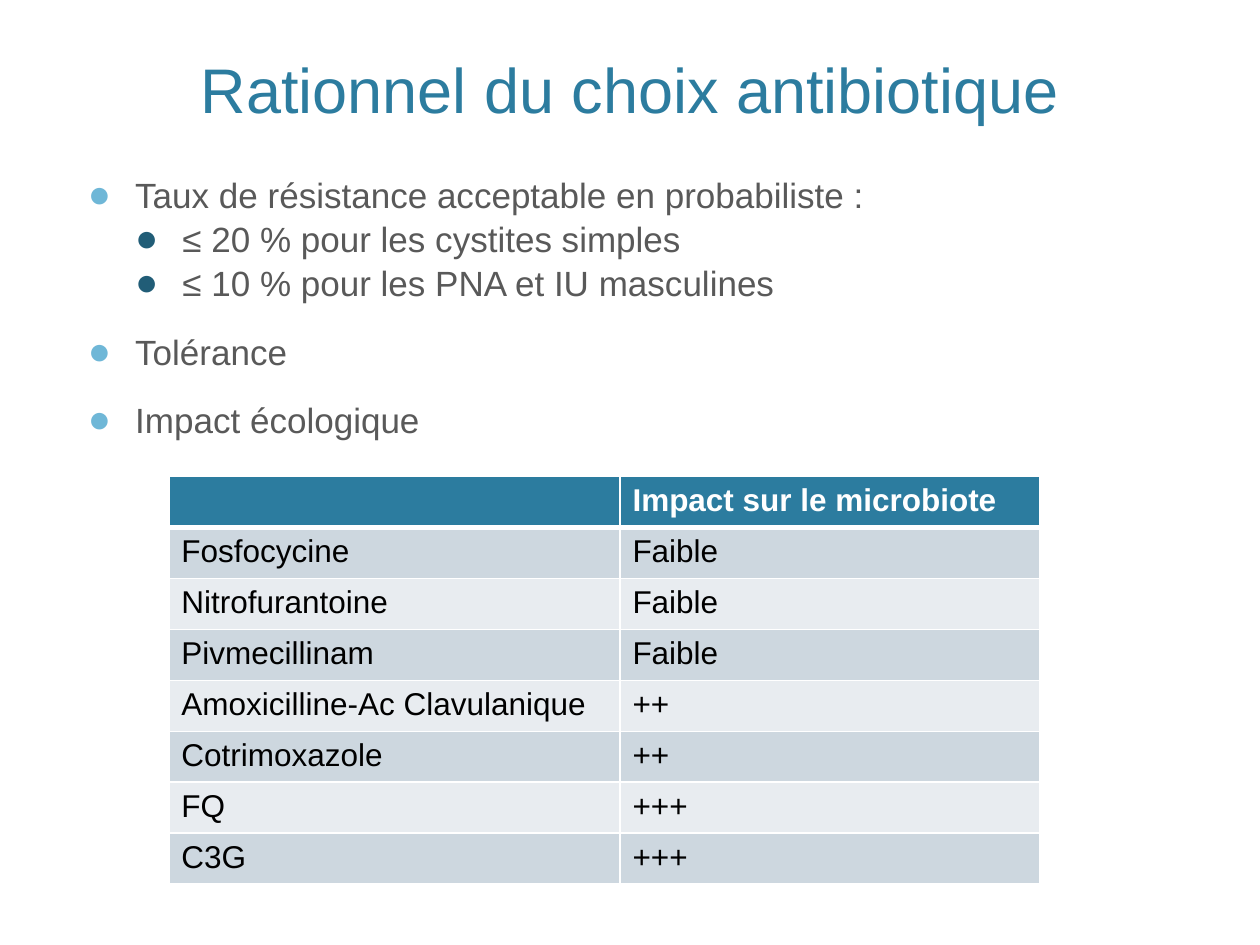
import pptx
import pptx.dml.color
import pptx.enum.text
import pptx.oxml
import pptx.oxml.ns
import pptx.util

Inches = pptx.util.Inches
Pt = pptx.util.Pt
RGBColor = pptx.dml.color.RGBColor
PP_ALIGN = pptx.enum.text.PP_ALIGN
MSO_ANCHOR = pptx.enum.text.MSO_ANCHOR

TEAL = RGBColor(0x2C, 0x7C, 0x9F)
LIGHT_BLUE = RGBColor(0x6F, 0xB7, 0xD7)
DARK_BLUE = RGBColor(0x21, 0x5D, 0x77)
GREY = RGBColor(0x59, 0x59, 0x59)
WHITE = RGBColor(0xFF, 0xFF, 0xFF)
BLACK = RGBColor(0x00, 0x00, 0x00)
BAND_DARK = RGBColor(0xCD, 0xD7, 0xDF)
BAND_LIGHT = RGBColor(0xE8, 0xEC, 0xF0)

NAMESPACE = pptx.oxml.ns.nsdecls("a")

TITLE = "Rationnel du choix antibiotique"
CRITERIA = [
    (0, "Taux de résistance acceptable en probabiliste :"),
    (1, "≤ 20 % pour les cystites simples"),
    (1, "≤ 10 % pour les PNA et IU masculines"),
    (0, "Tolérance"),
    (0, "Impact écologique"),
]
IMPACTS = [
    ("", "Impact sur le microbiote"),
    ("Fosfocycine", "Faible"),
    ("Nitrofurantoine", "Faible"),
    ("Pivmecillinam", "Faible"),
    ("Amoxicilline-Ac Clavulanique", "++"),
    ("Cotrimoxazole", "++"),
    ("FQ", "+++"),
    ("C3G", "+++"),
]


def write_text(paragraph, text, size=18, color=BLACK, bold=False, align=PP_ALIGN.LEFT):
    paragraph.alignment = align
    run = paragraph.add_run()
    run.text = text
    run.font.name = "Arial"
    run.font.size = Pt(size)
    run.font.bold = bold
    run.font.color.rgb = color


class SlideBuilder:
    bullet_colors = (LIGHT_BLUE, DARK_BLUE)
    bullet_spacing = (20, 6)
    bullet_indent = 0.375

    def __init__(self, slide):
        self.slide = slide

    def text_frame(self, left, top, width, height, anchor=MSO_ANCHOR.TOP):
        shape = self.slide.shapes.add_textbox(
            Inches(left), Inches(top), Inches(width), Inches(height))
        frame = shape.text_frame
        frame.word_wrap = True
        frame.vertical_anchor = anchor
        return frame

    def title(self, text):
        frame = self.text_frame(0.6, 0.16, 8.8, 0.89, MSO_ANCHOR.BOTTOM)
        write_text(frame.paragraphs[0], text, size=36, color=TEAL, align=PP_ALIGN.CENTER)

    def add_bullet(self, paragraph, level):
        properties = paragraph._p.get_or_add_pPr()
        properties.set("marL", str(Inches(self.bullet_indent * (level + 1))))
        properties.set("indent", str(-Inches(self.bullet_indent)))
        for element in (
            f'<a:buClr {NAMESPACE}><a:srgbClr val="{self.bullet_colors[level]}"/></a:buClr>',
            f'<a:buSzPct {NAMESPACE} val="110000"/>',
            f'<a:buFont {NAMESPACE} typeface="Arial"/>',
            f'<a:buChar {NAMESPACE} char="●"/>',
        ):
            properties.append(pptx.oxml.parse_xml(element))

    def bullet_list(self, items):
        frame = self.text_frame(0.6, 1.39, 8.8, 4.75)
        for index, (level, text) in enumerate(items):
            paragraph = frame.add_paragraph() if index else frame.paragraphs[0]
            paragraph.level = level
            paragraph.line_spacing = 0.8
            paragraph.space_before = Pt(self.bullet_spacing[level] if index else 0)
            self.add_bullet(paragraph, level)
            write_text(paragraph, text, size=20, color=GREY)

    def cell_borders(self, cell, top=1, bottom=1):
        properties = cell._tc.get_or_add_tcPr()
        widths = {"lnL": 1, "lnR": 1, "lnT": top, "lnB": bottom}
        for index, (side, width) in enumerate(widths.items()):
            properties.insert(index, pptx.oxml.parse_xml(
                f'<a:{side} {NAMESPACE} w="{Pt(width)}"><a:solidFill>'
                f'<a:srgbClr val="{WHITE}"/></a:solidFill></a:{side}>'))

    def table(self, rows):
        column_widths = (3.58, 3.33)
        frame = self.slide.shapes.add_table(
            len(rows), len(column_widths), Inches(1.34), Inches(3.78),
            Inches(sum(column_widths)), Inches(3.24))
        table = frame.table
        for column, width in zip(table.columns, column_widths):
            column.width = Inches(width)
        for row_index, texts in enumerate(rows):
            header = row_index == 0
            band = BAND_DARK if row_index % 2 else BAND_LIGHT
            for column_index, text in enumerate(texts):
                cell = table.cell(row_index, column_index)
                cell.fill.solid()
                cell.fill.fore_color.rgb = TEAL if header else band
                self.cell_borders(cell, top=3 if row_index == 1 else 1,
                                  bottom=3 if header else 1)
                if text:
                    write_text(cell.text_frame.paragraphs[0], text,
                               color=WHITE if header else BLACK, bold=header)


def main():
    presentation = pptx.Presentation()
    presentation.slide_width = Inches(10)
    presentation.slide_height = Inches(7.5)
    slide = presentation.slides.add_slide(presentation.slide_layouts[6])
    builder = SlideBuilder(slide)
    builder.title(TITLE)
    builder.bullet_list(CRITERIA)
    builder.table(IMPACTS)
    presentation.save("out.pptx")


if __name__ == "__main__":
    main()
